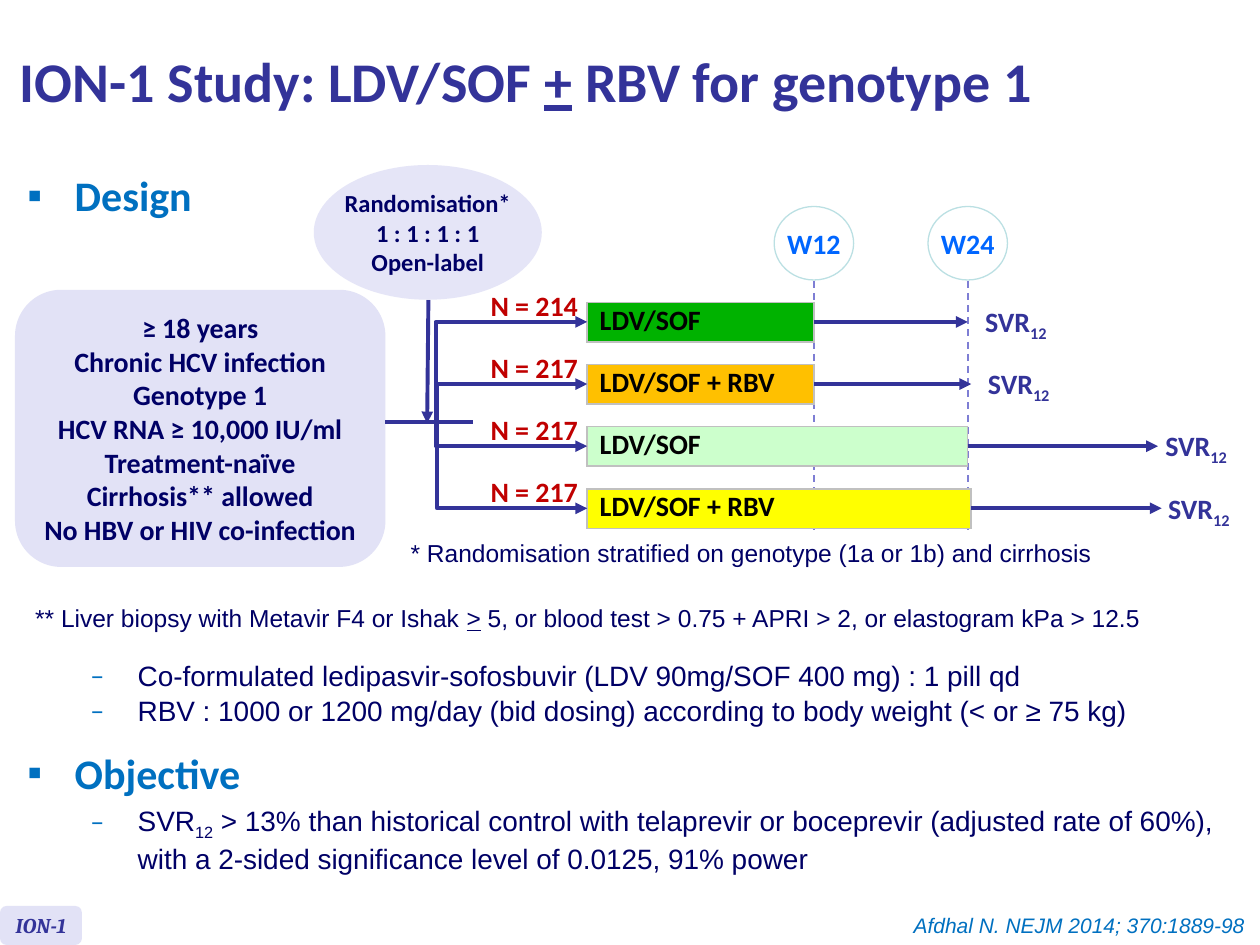
from collections import namedtuple
from dataclasses import dataclass

from lxml import etree
from pptx import Presentation
from pptx.dml.color import RGBColor
from pptx.enum.dml import MSO_LINE
from pptx.enum.shapes import MSO_CONNECTOR, MSO_SHAPE
from pptx.enum.text import MSO_ANCHOR, PP_ALIGN
from pptx.oxml.ns import qn
from pptx.util import Pt

STRAIGHT = MSO_CONNECTOR.STRAIGHT
ELLIPSE, ROUNDED = MSO_SHAPE.OVAL, MSO_SHAPE.ROUNDED_RECTANGLE
LEFT, CENTER, RIGHT = PP_ALIGN.LEFT, PP_ALIGN.CENTER, PP_ALIGN.RIGHT
TOP, MIDDLE = MSO_ANCHOR.TOP, MSO_ANCHOR.MIDDLE
DASH = MSO_LINE.DASH

Box = namedtuple("Box", "left top width height")
Style = namedtuple("Style", "font size color bold italic", defaults=(False, False))
Bullet = namedtuple("Bullet", "char font indent")
Arm = namedtuple("Arm", "patients drug color bar_end arrow_end svr_left")


@dataclass(frozen=True)
class Theme:
    navy: str = "333399"
    panel: str = "E2E2F6"
    bubble: str = "E5E5F7"
    white: str = "FFFFFF"
    week_border: str = "BBE0E3"
    week_line: str = "7E7ED4"
    bar_border: str = "C0C0C0"
    bullet: str = "0070C0"
    title: Style = Style("Calibri", 32, "333399", True)
    heading: Style = Style("Calibri", 24, "0070C0", True)
    body: Style = Style("Arial", 16, "000066")
    note: Style = Style("Arial", 14, "000066")
    criteria: Style = Style("Calibri", 16, "000066", True)
    allocation: Style = Style("Calibri", 14, "000066", True)
    week: Style = Style("Calibri", 16, "0066FF", True)
    drug: Style = Style("Calibri", 16, "000000", True)
    patients: Style = Style("Calibri", 16, "C00000", True)
    outcome: Style = Style("Calibri", 16, "333399", True)
    tag: Style = Style("Cambria", 12, "333399", True, True)
    citation: Style = Style("Arial", 12, "0070C0", False, True)


THEME = Theme()
SECTION = Bullet("▪", "Arial", 27)
DETAIL = Bullet("–", "Calibri", 63)
HANGING = 27
SUBSCRIPT, UNDERLINE = "subscript", "underline"
SVR12 = ["SVR", ("12", SUBSCRIPT)]


def rgb(color):
    return RGBColor.from_string(color)


def points(box):
    return [Pt(value) for value in box]


def add_bullet(paragraph, bullet):
    properties = paragraph._p.get_or_add_pPr()
    properties.set("marL", str(Pt(bullet.indent)))
    properties.set("indent", str(-Pt(HANGING)))
    color = etree.SubElement(properties, qn("a:buClr"))
    etree.SubElement(color, qn("a:srgbClr"), val=THEME.bullet)
    etree.SubElement(properties, qn("a:buFont"), typeface=bullet.font)
    etree.SubElement(properties, qn("a:buChar"), char=bullet.char)


def write_paragraph(paragraph, runs, style, align=LEFT, bullet=None):
    """Each run is a string, or a pair of a string and its effect."""
    paragraph.alignment = align
    if bullet:
        add_bullet(paragraph, bullet)
    for part in [runs] if isinstance(runs, str) else runs:
        text, effect = (part, None) if isinstance(part, str) else part
        run = paragraph.add_run()
        run.text = text
        font = run.font
        font.name, font.size = style.font, Pt(style.size)
        font.bold, font.italic = style.bold, style.italic
        font.color.rgb = rgb(style.color)
        if effect == UNDERLINE:
            font.underline = True
        elif effect == SUBSCRIPT:
            run._r.get_or_add_rPr().set("baseline", "-25000")


def write_lines(frame, lines, style, align=LEFT, bullet=None, space=0):
    for index, runs in enumerate(lines):
        paragraph = frame.add_paragraph() if index else frame.paragraphs[0]
        if index and space:
            paragraph.space_before = Pt(space)
        write_paragraph(paragraph, runs, style, align, bullet)


def add_text(slide, box, lines, style, align=LEFT, anchor=TOP, inset=7.2, **options):
    frame = slide.shapes.add_textbox(*points(box)).text_frame
    frame.word_wrap = True
    frame.vertical_anchor = anchor
    frame.margin_left = frame.margin_right = Pt(inset)
    write_lines(frame, lines, style, align, **options)
    return frame


def add_panel(slide, kind, box, fill, lines, style, border=None):
    shape = slide.shapes.add_shape(kind, *points(box))
    shape.shadow.inherit = False
    shape.fill.solid()
    shape.fill.fore_color.rgb = rgb(fill)
    if border:
        shape.line.color.rgb = rgb(border)
        shape.line.width = Pt(0.75)
    else:
        shape.line.fill.background()
    frame = shape.text_frame
    frame.word_wrap = False
    frame.vertical_anchor = MIDDLE
    frame.margin_left = frame.margin_right = frame.margin_top = frame.margin_bottom = 0
    write_lines(frame, lines, style, CENTER)


def style_line(line, color, width, dash=None, arrows=()):
    line.color.rgb = rgb(color)
    line.width = Pt(width)
    if dash:
        line.dash_style = dash
    for end in arrows:
        etree.SubElement(line._get_or_add_ln(), qn(f"a:{end}"), type="triangle")


def add_line(slide, start, end, color=THEME.navy, width=2.25, dash=None, arrows=()):
    connector = slide.shapes.add_connector(STRAIGHT, *points(start + end))
    etree.SubElement(connector._element.spPr, qn("a:effectLst"))
    style_line(connector.line, color, width, dash, arrows)


def add_bracket(slide, spine, right, top, bottom):
    """Branch one spine into two arrows pointing right."""
    builder = slide.shapes.build_freeform(Pt(right), Pt(top), scale=1.0)
    corners = [(spine, top), (spine, bottom), (right, bottom)]
    builder.add_line_segments([points(corner) for corner in corners], close=False)
    bracket = builder.convert_to_shape()
    bracket.shadow.inherit = False
    bracket.fill.background()
    style_line(bracket.line, THEME.navy, 2.25, arrows=("headEnd", "tailEnd"))


def add_bar(slide, box, drug, color):
    table = slide.shapes.add_table(1, 1, *points(box)).table
    table.first_row = table.horz_banding = False
    cell = table.cell(0, 0)
    cell.vertical_anchor = MIDDLE
    for side in ("lnL", "lnR", "lnT", "lnB"):
        border = etree.SubElement(cell._tc.get_or_add_tcPr(), qn(f"a:{side}"), w=str(Pt(1)))
        fill = etree.SubElement(border, qn("a:solidFill"))
        etree.SubElement(fill, qn("a:srgbClr"), val=THEME.bar_border)
    cell.fill.solid()
    cell.fill.fore_color.rgb = rgb(color)
    paragraph = cell.text_frame.paragraphs[0]
    paragraph.line_spacing = 0.8
    write_paragraph(paragraph, drug, THEME.drug)


def add_enrolment(slide, box):
    left, top = box.left, box.top
    add_line(slide, (left + 236.2, top + 77), (left + 235.5, top + 147.6), arrows=("tailEnd",))
    add_panel(slide, ELLIPSE, Box(left + 170.7, top, 130.3, 77), THEME.bubble,
              ["Randomisation*", "1 : 1 : 1 : 1", "Open-label"], THEME.allocation)
    add_panel(slide, ROUNDED, Box(left, top + 71.3, 211.7, 158.4), THEME.panel,
              ["≥ 18 years", "Chronic HCV infection", "Genotype 1", "HCV RNA ≥ 10,000 IU/ml",
               "Treatment-naïve", "Cirrhosis** allowed", "No HBV or HIV co-infection"],
              THEME.criteria)
    add_line(slide, (left + 211.7, top + 146.9), (left + box.width, top + 146.9))


def add_arms(slide, box):
    left, top = box.left, box.top
    bar_left, bar_height, pitch, first_row = 86.5, 22.3, 35.5, 54.8
    week_12, week_24 = 216.1, 304
    for label, week in (("W12", week_12), ("W24", week_24)):
        x = left + week
        add_line(slide, (x, top + 42.5), (x, top + box.height), THEME.week_line, 1, DASH)
        add_panel(slide, ELLIPSE, Box(x - 22.7, top, 45.4, 42), THEME.white,
                  [label], THEME.week, THEME.week_border)

    arms = [Arm("N = 214", "LDV/SOF", "00B200", week_12, 304, 306.8),
            Arm("N = 217", "LDV/SOF + RBV", "FFC000", week_12, 306, 308.4),
            Arm("N = 217", "LDV/SOF", "CCFFCC", week_24, 412.7, 409.8),
            Arm("N = 217", "LDV/SOF + RBV", "FFFF00", week_24 + 2, 414.8, 411.4)]
    middles = []
    for index, arm in enumerate(arms):
        row = top + first_row + index * pitch
        middle = row + bar_height / 2
        middles.append(middle)
        add_bar(slide, Box(left + bar_left, row, arm.bar_end - bar_left, bar_height),
                arm.drug, arm.color)
        add_text(slide, Box(left + 23.9, row - 11.5, 64.8, 26.6), [arm.patients],
                 THEME.patients, CENTER, inset=0)
        add_line(slide, (left + arm.bar_end, middle), (left + arm.arrow_end, middle),
                 arrows=("tailEnd",))
        add_text(slide, Box(left + arm.svr_left, row - 2.2, 59, 26.6), [SVR12], THEME.outcome)
    for index, spine in enumerate((left, left + 0.7)):
        add_bracket(slide, spine, left + bar_left, middles[index], middles[index + 2])


def add_objective(slide, box):
    frame = add_text(slide, box, ["Objective"], THEME.heading, bullet=SECTION)
    paragraph = frame.add_paragraph()
    paragraph.space_before = Pt(3.2)
    goal = (" > 13% than historical control with telaprevir or boceprevir (adjusted rate of 60%), "
            "with a 2-sided significance level of 0.0125, 91% power")
    write_paragraph(paragraph, SVR12 + [goal], THEME.body, bullet=DETAIL)


def add_footer(slide, box):
    add_panel(slide, ROUNDED, Box(box.left, box.top, 46.8, box.height), THEME.panel,
              ["ION-1"], THEME.tag)
    add_text(slide, Box(box.left + 444.2, box.top, box.width - 445.6, box.height),
             ["Afdhal N. NEJM 2014; 370:1889-98"], THEME.citation, RIGHT)


def main():
    presentation = Presentation()
    presentation.slide_width, presentation.slide_height = Pt(720), Pt(540)
    slide = presentation.slides.add_slide(presentation.slide_layouts[6])
    add_text(slide, Box(4.3, 2.2, 707.8, 87.1),
             [["ION-1 Study: LDV/SOF ", ("+", UNDERLINE), " RBV for genotype 1"]],
             THEME.title, anchor=MIDDLE)
    add_text(slide, Box(8.6, 93.6, 142.6, 45.4), ["Design"], THEME.heading, bullet=SECTION)
    add_enrolment(slide, Box(8.6, 94.3, 261.4, 229.7))
    add_arms(slide, Box(249, 118, 471, 185))
    add_text(slide, Box(227.5, 303.8, 419, 24.5),
             ["* Randomisation stratified on genotype (1a or 1b) and cirrhosis"], THEME.note)
    add_text(slide, Box(13, 341.3, 686.9, 24.5),
             [["** Liver biopsy with Metavir F4 or Ishak ", (">", UNDERLINE),
               " 5, or blood test > 0.75 + APRI > 2, or elastogram kPa > 12.5"]], THEME.note)
    add_text(slide, Box(8.6, 373, 709.9, 46.8),
             ["Co-formulated ledipasvir-sofosbuvir (LDV 90mg/SOF 400 mg) : 1 pill qd",
              "RBV : 1000 or 1200 mg/day (bid dosing) according to body weight (< or ≥ 75 kg)"],
             THEME.body, bullet=DETAIL, space=0.7)
    add_objective(slide, Box(8.6, 423.4, 707, 86.4))
    add_footer(slide, Box(0, 517.7, 720, 22.3))
    presentation.save("out.pptx")


if __name__ == "__main__":
    main()
